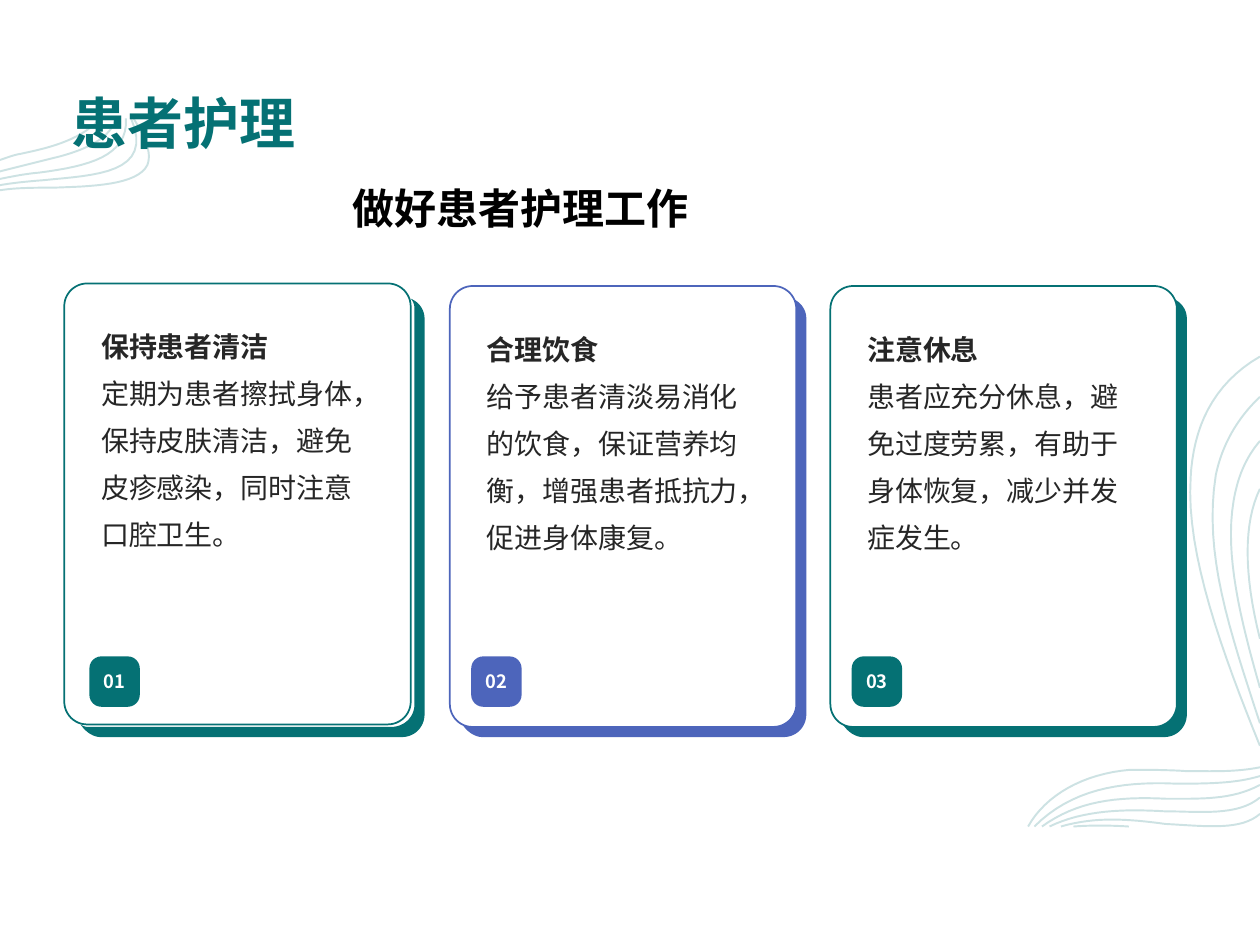
import pptx
import pptx.dml.color
import pptx.enum.shapes
import pptx.enum.text
import pptx.oxml
import pptx.oxml.ns
import pptx.util

Inches = pptx.util.Inches
Pt = pptx.util.Pt
ANCHOR = pptx.enum.text.MSO_ANCHOR
COLORS = {"teal": "057174", "blue": "4D65BB", "white": "FFFFFF",
          "text": "262626", "black": "000000"}
FONT = "Noto Sans CJK SC"
CURVE_STEPS = 16

# Each strand is a start point followed by cubic curves, in inches.
LEFT_WAVES = [
    [(0, 1.27), (0.06, 1.25, 0.11, 1.23, 0.17, 1.22), (0.35, 1.18, 0.62, 1.13, 0.8, 0.94)],
    [(0, 1.36), (0.16, 1.32, 0.32, 1.28, 0.48, 1.24), (0.7, 1.18, 0.88, 1.09, 0.92, 0.94)],
    [(0, 1.42), (0.1, 1.4, 0.2, 1.38, 0.31, 1.37), (0.7, 1.32, 1.02, 1.24, 1, 0.94)],
    [(0, 1.47), (0.11, 1.45, 0.23, 1.44, 0.35, 1.43), (0.75, 1.39, 1.23, 1.38, 1.04, 0.94)],
    [(0, 1.51), (0.13, 1.49, 0.27, 1.49, 0.41, 1.49), (0.73, 1.48, 1.09, 1.47, 1.17, 1.31),
     (1.21, 1.2, 1.14, 1.07, 1.06, 0.94)],
]
RIGHT_WAVES = [
    [(10, 3.88), (9.87, 4.15, 9.87, 4.55, 10, 5.07)],
    [(10, 3.5), (9.88, 3.64, 9.82, 3.8, 9.79, 3.98), (9.72, 4.4, 9.84, 4.9, 10, 5.46)],
    [(10, 3.15), (9.82, 3.32, 9.7, 3.53, 9.65, 3.77), (9.55, 4.4, 9.76, 5, 10, 5.74)],
    [(10, 2.83), (9.62, 3.05, 9.47, 3.4, 9.45, 3.79), (9.41, 4.4, 9.71, 5.2, 10, 5.92)],
    [(10, 6.09), (9.8, 6.13, 9.62, 6.12, 9.41, 6.12), (9.26, 6.11, 9.11, 6.11, 8.97, 6.11),
     (8.6, 6.14, 8.3, 6.31, 8.16, 6.56)],
    [(10, 6.16), (9.8, 6.22, 9.58, 6.22, 9.33, 6.22), (8.88, 6.2, 8.5, 6.27, 8.21, 6.56)],
    [(10, 6.23), (9.78, 6.35, 9.53, 6.34, 9.26, 6.34), (8.85, 6.32, 8.55, 6.36, 8.27, 6.56)],
    [(10, 6.33), (9.82, 6.48, 9.53, 6.44, 9.25, 6.44), (8.92, 6.42, 8.6, 6.43, 8.33, 6.56)],
    [(10, 6.46), (9.85, 6.59, 9.6, 6.56, 9.25, 6.54), (8.95, 6.5, 8.7, 6.48, 8.42, 6.56)],
    [(8.52, 6.56), (8.65, 6.55, 8.8, 6.55, 8.96, 6.56)],
]
# Two-number steps are straight lines, six-number steps are curves.
CARD_EDGE = [
    (2.62, 0), (2.69, 0.03, 2.73, 0.09, 2.73, 0.16), (2.73, 3.3),
    (2.73, 3.4, 2.65, 3.48, 2.55, 3.48), (0.16, 3.48),
    (0.1, 3.48, 0.04, 3.44, 0, 3.38), (0.03, 3.4, 0.05, 3.4, 0.08, 3.4), (2.46, 3.4),
    (2.57, 3.4, 2.65, 3.32, 2.65, 3.22), (2.65, 0.08), (2.65, 0.05, 2.64, 0.02, 2.62, 0),
]
# Card left and top, edge left, badge left, colour, fill opacity, heading, body.
CARDS = [
    (0.51, 2.25, 0.64, 0.71, "teal", 10, "保持患者清洁",
     "定期为患者擦拭身体，保持皮肤清洁，避免皮疹感染，同时注意口腔卫生。"),
    (3.57, 2.27, 3.67, 3.74, "blue", 100, "合理饮食",
     "给予患者清淡易消化的饮食，保证营养均衡，增强患者抵抗力，促进身体康复。"),
    (6.59, 2.27, 6.69, 6.76, "teal", 100, "注意休息",
     "患者应充分休息，避免过度劳累，有助于身体恢复，减少并发症发生。"),
]


def paint(color_holder, color, opacity=100):
    """Set a solid colour on a fill, with its opacity in percent."""
    color_holder.solid()
    color_holder.fore_color.rgb = pptx.dml.color.RGBColor.from_string(COLORS[color])
    if opacity < 100:
        solid = color_holder._xPr.find(pptx.oxml.ns.qn("a:solidFill"))
        alpha = pptx.oxml.parse_xml(
            f'<a:alpha {pptx.oxml.ns.nsdecls("a")} val="{opacity * 1000}"/>')
        solid[0].append(alpha)


def format_runs(paragraph, size, color, bold=True, font=FONT):
    for run in paragraph.runs:
        run.font.size = Pt(size)
        run.font.bold = bold
        run.font.name = font
        run.font.color.rgb = pptx.dml.color.RGBColor.from_string(COLORS[color])
        if font == FONT:
            run._r.get_or_add_rPr().append(pptx.oxml.parse_xml(
                f'<a:ea {pptx.oxml.ns.nsdecls("a")} typeface="{font}"/>'))


def set_margins(frame, left, top, right, bottom):
    frame.margin_left, frame.margin_top = Inches(left), Inches(top)
    frame.margin_right, frame.margin_bottom = Inches(right), Inches(bottom)


def trace(steps):
    """Turn line and curve steps into a list of points."""
    points = [steps[0]]
    for step in steps[1:]:
        if len(step) == 2:
            points.append(step)
            continue
        controls = [points[-1], step[:2], step[2:4], step[4:]]
        for index in range(1, CURVE_STEPS + 1):
            t = index / CURVE_STEPS
            weights = [(1 - t) ** 3, 3 * t * (1 - t) ** 2, 3 * t ** 2 * (1 - t), t ** 3]
            points.append(tuple(sum(w * point[axis] for w, point in zip(weights, controls))
                                for axis in (0, 1)))
    return points


def add_outline(slide, steps, left=0, top=0, close=True):
    points = [(Inches(left + x), Inches(top + y)) for x, y in trace(steps)]
    builder = slide.shapes.build_freeform(*points[0])
    builder.add_line_segments(points[1:], close=close)
    shape = builder.convert_to_shape()
    shape.shadow.inherit = False
    return shape


def add_waves(slide, strands):
    for strand in strands:
        shape = add_outline(slide, strand, close=False)
        shape.fill.background()
        shape.line.width = Pt(1.1)
        paint(shape.line.fill, "teal", 20)


def add_rounded_box(slide, left, top, width, height, radius):
    shape = slide.shapes.add_shape(
        pptx.enum.shapes.MSO_SHAPE.ROUNDED_RECTANGLE,
        Inches(left), Inches(top), Inches(width), Inches(height))
    shape.adjustments[0] = radius
    shape.shadow.inherit = False
    return shape


def add_text_line(slide, left, top, width, height, text):
    box = slide.shapes.add_textbox(Inches(left), Inches(top), Inches(width), Inches(height))
    box.text_frame.word_wrap = True
    box.text_frame.text = text
    return box.text_frame


def add_card(slide, number, left, top, edge_left, badge_left, color, opacity, heading, body):
    edge = add_outline(slide, CARD_EDGE, edge_left, 2.37)
    paint(edge.fill, color)
    edge.line.fill.background()

    card = add_rounded_box(slide, left, top, 2.75, 3.5, 0.066)
    paint(card.fill, "white", opacity)
    paint(card.line.fill, color)
    card.line.width = Pt(1)
    frame = card.text_frame
    frame.word_wrap = True
    frame.vertical_anchor = ANCHOR.TOP
    set_margins(frame, 0.24, 0.21, 0.24, 0.57)
    frame.text = f"{heading}\n{body}"
    for paragraph, bold in zip(frame.paragraphs, (True, False)):
        paragraph.alignment = pptx.enum.text.PP_ALIGN.LEFT
        paragraph.line_spacing = 1.4
        format_runs(paragraph, 16, "text", bold)

    badge = add_rounded_box(slide, badge_left, 5.21, 0.4, 0.4, 0.238)
    paint(badge.fill, color)
    badge.line.fill.background()
    badge.text_frame.word_wrap = False
    badge.text_frame.vertical_anchor = ANCHOR.MIDDLE
    badge.text_frame.text = f"{number:02d}"
    badge.text_frame.paragraphs[0].alignment = pptx.enum.text.PP_ALIGN.CENTER
    format_runs(badge.text_frame.paragraphs[0], 10.5, "white")


def main():
    presentation = pptx.Presentation()
    presentation.slide_width, presentation.slide_height = Inches(10), Inches(7.5)
    slide = presentation.slides.add_slide(presentation.slide_layouts[6])

    add_waves(slide, LEFT_WAVES + RIGHT_WAVES)
    title = add_text_line(slide, 0.57, 0.51, 8.86, 0.73, "患者护理")
    title.vertical_anchor = ANCHOR.BOTTOM
    set_margins(title, 0, 0, 0, 0)
    format_runs(title.paragraphs[0], 32, "teal")
    for number, card in enumerate(CARDS, 1):
        add_card(slide, number, *card)
    subtitle = add_text_line(slide, 2.7, 1.4, 5.08, 0.59, "做好患者护理工作")
    format_runs(subtitle.paragraphs[0], 24, "black", font="Arial")

    presentation.save("out.pptx")


if __name__ == "__main__":
    main()
